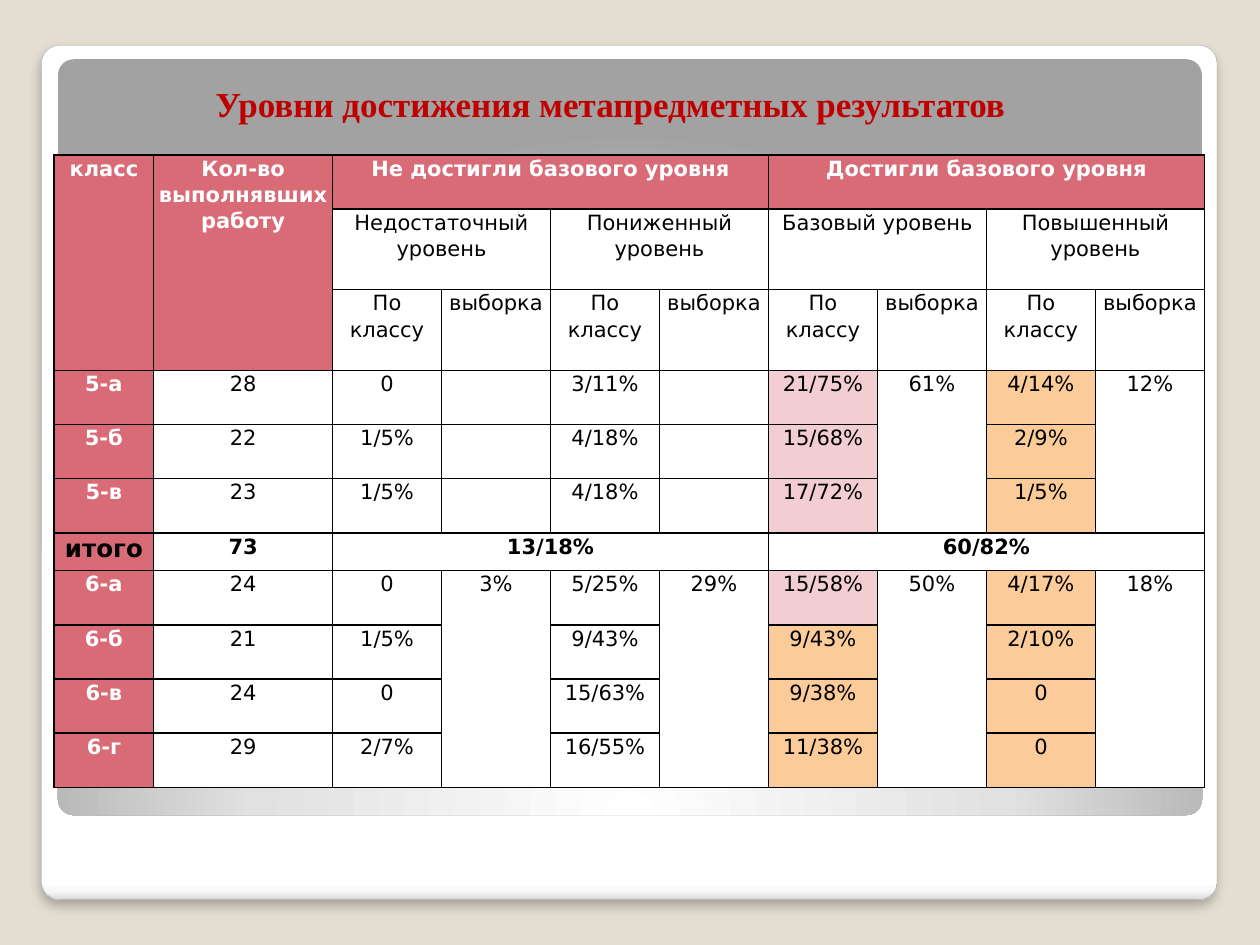
"""Build a slide with a table of class achievement levels."""
from lxml import etree
from pptx import Presentation
from pptx.dml.color import RGBColor
from pptx.enum.shapes import MSO_SHAPE
from pptx.enum.text import MSO_ANCHOR, PP_ALIGN
from pptx.oxml import parse_xml
from pptx.util import Inches, Pt

ROUND = MSO_SHAPE.ROUNDED_RECTANGLE
CENTER, JUSTIFY = PP_ALIGN.CENTER, PP_ALIGN.JUSTIFY
MIDDLE = MSO_ANCHOR.MIDDLE
NS = "http://schemas.openxmlformats.org/drawingml/2006/main"
HUES = {"sand": "E3DED1", "edge": "A4A4A4", "red": "C00000", "rose": "D96B77",
        "pink": "F2CED2", "peach": "FBCC9A", "white": "FFFFFF", "black": "000000"}
CARD = [(0, "FFFFFF"), (98, "FFFFFF"), (99, "F7F7F7"), (100, "DADADA")]
PANEL = [(0, "FFFFFF"), (55, "E1E1E1"), (100, "A2A2A2")]
LINEAR = '<a:lin ang="5400000" scaled="0"/>'
RADIAL = ('<a:path path="circle"><a:fillToRect l="50000" t="175000" '
          'r="50000" b="-75000"/></a:path>')
SHADOW = (f'<a:effectLst xmlns:a="{NS}"><a:outerShdw blurRad="76200" dist="50800" '
          'dir="5400000" rotWithShape="0"><a:srgbClr val="000000">'
          '<a:alpha val="25000"/></a:srgbClr></a:outerShdw></a:effectLst>')
HEAD = 3
TOTAL = 6
WIDE, TALL = "<", "^"
GRID = [line.split("|") for line in (
    "класс|Кол-во выполнявших работу|Не достигли базового уровня|<|<|<|Достигли базового уровня|<|<|<",
    "^|^|Недостаточный\nуровень|<|Пониженный уровень|<|Базовый уровень|<|Повышенный уровень|<",
    "^|^" + "|По классу|выборка" * 4,
    "5-а|28|0||3/11%||21/75%|61%|4/14%|12%",
    "5-б|22|1/5%||4/18%||15/68%|^|2/9%|^",
    "5-в|23|1/5%||4/18%||17/72%|^|1/5%|^",
    "итого|73|13/18%|<|<|<|60/82%|<|<|<",
    "6-а|24|0|3%|5/25%|29%|15/58%|50%|4/17%|18%",
    "6-б|21|1/5%|^|9/43%|^|9/43%|^|2/10%|^",
    "6-в|24|0|^|15/63%|^|9/38%|^|0|^",
    "6-г|29|2/7%|^|16/55%|^|11/38%|^|0|^",
)]
HIGH = [0.43, 0.64, 0.64] + [0.43] * 3 + [0.3] + [0.43] * 4
BOX = (0.43, 1.23, 9.13, 5.02)
FIRST = [0.79, 1.42]


def rgb(name):
    """Return the named colour."""
    return RGBColor.from_string(HUES[name])


def reach(cells, mark):
    """Count the first cell and the merge marks that follow it."""
    size = 1
    while size < len(cells) and cells[size] == mark:
        size += 1
    return size


def look(row, col):
    """Return fill, text colour, weight and size for a table cell."""
    fill, ink, bold, size = "white", "black", row == TOTAL, 12
    if row == 0 or col == 0:
        fill, ink, bold = "rose", "white", True
        if row == TOTAL:
            ink, size = "black", 14
    elif row >= HEAD and row != TOTAL and col in (6, 8):
        fill = "pink" if col == 6 and row <= TOTAL + 1 else "peach"
    return fill, ink, bold, size


class Deck:
    """Hold the style and the current slide."""

    def __init__(self):
        """Open a slide with a plain background."""
        self.prs = Presentation()
        self.prs.slide_width, self.prs.slide_height = Inches(10), Inches(7.5)
        self.slide = self.prs.slides.add_slide(self.prs.slide_layouts[5])
        back = self.slide.background.fill
        back.solid()
        back.fore_color.rgb = rgb("sand")

    def style(self, frame, align, hue, **font):
        """Format every paragraph of a text frame."""
        for para in frame.paragraphs:
            para.alignment = align
            para.font.color.rgb = rgb(hue)
            for key, value in font.items():
                setattr(para.font, key, value)

    def plate(self, box, stops, path, edge=None):
        """Add a rounded plate with a gradient fill."""
        shape = self.slide.shapes.add_shape(ROUND, *map(Inches, box))
        shape.adjustments[0] = 0.021
        shape.shadow.inherit = False
        marks = "".join(f'<a:gs pos="{pos * 1000}"><a:srgbClr val="{hue}"/></a:gs>'
                        for pos, hue in stops)
        fill = parse_xml(f'<a:gradFill xmlns:a="{NS}" rotWithShape="1"><a:gsLst>'
                         f'{marks}</a:gsLst>{path}</a:gradFill>')
        props = shape.element.spPr
        props.find(f"{{{NS}}}prstGeom").addnext(fill)
        if edge:
            shape.line.color.rgb = rgb(edge)
            shape.line.width = Pt(0.16)
            props.replace(props.find(f"{{{NS}}}effectLst"), parse_xml(SHADOW))
        else:
            shape.line.fill.background()

    def title(self, text, box):
        """Place the title above the other elements."""
        shape = self.slide.shapes.title
        for key, value in zip(("left", "top", "width", "height"), box):
            setattr(shape, key, Inches(value))
        frame = shape.text_frame
        frame.text = text
        frame.word_wrap = True
        frame.vertical_anchor = MIDDLE
        self.style(frame, JUSTIFY, "red", name="Times New Roman",
                   size=Pt(20), bold=True)
        shape.element.getparent().append(shape.element)

    def border(self, cell):
        """Draw a black line on each side of a cell."""
        props = cell._tc.get_or_add_tcPr()
        for side in "LRTB":
            line = etree.SubElement(props, f"{{{NS}}}ln{side}", w="12700")
            fill = etree.SubElement(line, f"{{{NS}}}solidFill")
            etree.SubElement(fill, f"{{{NS}}}srgbClr", val=HUES["black"])

    def cell(self, cell, text, row, col):
        """Fill and format one table cell."""
        fill, ink, bold, size = look(row, col)
        self.border(cell)
        cell.fill.solid()
        cell.fill.fore_color.rgb = rgb(fill)
        margins = {"margin_left": 0.01, "margin_right": 0.01,
                   "margin_top": 0, "margin_bottom": 0}
        for key, value in margins.items():
            setattr(cell, key, Inches(value))
        if text not in (WIDE, TALL):
            cell.text = text
        self.style(cell.text_frame, CENTER, ink, name="DejaVu Sans",
                   size=Pt(size), bold=bold)
        for para in cell.text_frame.paragraphs:
            para.line_spacing = 1.07

    def table(self, grid, box):
        """Add the table and merge cells by their marks."""
        count = len(grid[0])
        frame = self.slide.shapes.add_table(len(grid), count, *map(Inches, box))
        table = frame.table
        table.first_row = table.horz_banding = False
        rest = count - len(FIRST)
        widths = FIRST + [(box[2] - sum(FIRST)) / rest] * rest
        for column, width in zip(table.columns, widths):
            column.width = Inches(width)
        for line, height in zip(table.rows, HIGH):
            line.height = Inches(height)
        for row, line in enumerate(grid):
            for col, text in enumerate(line):
                self.cell(table.cell(row, col), text, row, col)
                if text in (WIDE, TALL):
                    continue
                wide = reach(line[col:], WIDE)
                tall = reach([item[col] for item in grid[row:]], TALL)
                if wide * tall > 1:
                    end = table.cell(row + tall - 1, col + wide - 1)
                    table.cell(row, col).merge(end)


def main():
    """Build and save the deck."""
    deck = Deck()
    deck.plate((0.33, 0.36, 9.33, 6.78), CARD, LINEAR, "edge")
    deck.plate((0.46, 0.47, 9.08, 6), PANEL, RADIAL)
    deck.table(GRID, BOX)
    deck.title("Уровни достижения метапредметных результатов", (1.61, 0.6, 7.32, 0.44))
    deck.prs.save("out.pptx")


if __name__ == "__main__":
    main()
